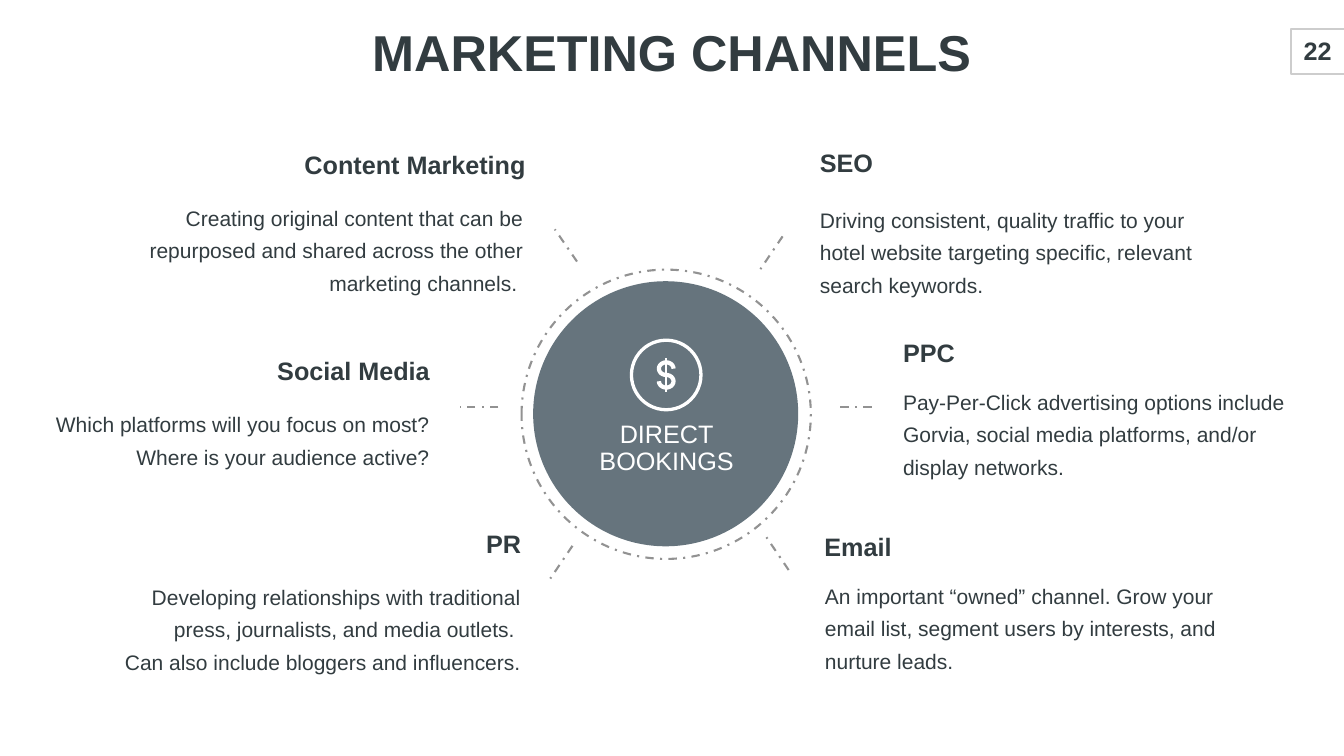
from dataclasses import dataclass
from math import cos, radians, sin

from lxml.etree import SubElement
from pptx import Presentation
from pptx.dml.color import RGBColor
from pptx.enum.dml import MSO_LINE
from pptx.enum.shapes import MSO_CONNECTOR, MSO_SHAPE
from pptx.enum.text import MSO_ANCHOR, PP_ALIGN
from pptx.oxml.ns import qn
from pptx.util import Inches, Pt


@dataclass(frozen=True)
class Theme:
    """Colours, font and type sizes of the deck."""

    ink: str = "323C40"
    disc: str = "66747D"
    dash: str = "929292"
    frame: str = "CDCDCD"
    white: str = "FFFFFF"
    font: str = "Arial"
    title: int = 72
    heading: int = 36
    body: int = 30


LEFT, CENTER, RIGHT = PP_ALIGN.LEFT, PP_ALIGN.CENTER, PP_ALIGN.RIGHT
TOP, MIDDLE, BOTTOM = MSO_ANCHOR.TOP, MSO_ANCHOR.MIDDLE, MSO_ANCHOR.BOTTOM
HEADING_HEIGHT, BODY_HEIGHT = 0.69, 1.75
HEADING_WIDTH = 6.18

CHANNELS = [
    ("Content Marketing", RIGHT, 10.43, 2.97, 10.38, 3.92, 7.76,
     "Creating original content that can be repurposed and shared across the other marketing channels. "),
    ("Social Media", RIGHT, 8.53, 7.07, 8.52, 8.01, 7.76,
     "Which platforms will you focus on most? Where is your audience active?"),
    ("PR", RIGHT, 10.34, 10.5, 10.33, 11.44, 7.97,
     "Developing relationships with traditional press, journalists, and media outlets. \n"
     "Can also include bloggers and influencers."),
    ("SEO", LEFT, 16.27, 2.94, 16.27, 3.96, 7.76,
     "Driving consistent, quality traffic to your hotel website targeting specific, relevant search keywords."),
    ("PPC", LEFT, 17.92, 6.7, 17.92, 7.57, 7.76,
     "Pay-Per-Click advertising options include Gorvia, social media platforms, and/or display networks."),
    ("Email", LEFT, 16.36, 10.55, 16.37, 11.42, 7.97,
     "An important “owned” channel. Grow your email list, segment users by interests, and nurture leads."),
]

SPOKES = [
    (15.53, 4.69, 15.09, 5.34),
    (11.36, 10.83, 10.92, 11.48),
    (17.3, 8.07, 16.55, 8.07),
    (9.89, 8.07, 9.12, 8.07),
    (15.65, 11.31, 15.21, 10.66),
    (11.45, 5.19, 11.01, 4.55),
]


class SlideBuilder:
    """Draws styled elements on one slide."""

    def __init__(self, slide, theme):
        """Keep the slide and its theme."""
        self.slide = slide
        self.theme = theme

    def set_text(self, shape, text, size, color=None, bold=False, align=LEFT,
                 anchor=TOP, spacing=1.0, inset=0):
        """Put one formatted paragraph into a shape."""
        frame = shape.text_frame
        frame.word_wrap = True
        frame.vertical_anchor = anchor
        frame.margin_left = frame.margin_right = Inches(inset)
        frame.margin_top = frame.margin_bottom = Inches(inset)
        paragraph = frame.paragraphs[0]
        paragraph.text = text
        paragraph.alignment = align
        paragraph.line_spacing = spacing
        for run in paragraph.runs:
            run.font.name = self.theme.font
            run.font.size = Pt(size)
            run.font.bold = bold
            run.font.color.rgb = RGBColor.from_string(color or self.theme.ink)

    def title(self, text, left, top, width, height):
        """Fill and place the title placeholder."""
        shape = self.slide.shapes.title
        shape.left, shape.top = Inches(left), Inches(top)
        shape.width, shape.height = Inches(width), Inches(height)
        self.set_text(shape, text, self.theme.title, bold=True, align=CENTER,
                      anchor=MIDDLE, spacing=0.8)

    def text(self, text, left, top, width, height, size, **style):
        """Add a text box."""
        shape = self.slide.shapes.add_textbox(
            Inches(left), Inches(top), Inches(width), Inches(height))
        self.set_text(shape, text, size, **style)

    def stroke(self, line, color, width, dash=None):
        """Format a line or an outline."""
        line.color.rgb = RGBColor.from_string(color)
        line.width = Pt(width)
        if dash:
            line.dash_style = dash

    def shape(self, kind, left, top, width, height, fill=None, line=None,
              line_width=3, dash=None):
        """Add a preset shape with a fill or an outline."""
        shape = self.slide.shapes.add_shape(
            kind, Inches(left), Inches(top), Inches(width), Inches(height))
        shape.shadow.inherit = False
        if fill:
            shape.fill.solid()
            shape.fill.fore_color.rgb = RGBColor.from_string(fill)
        else:
            shape.fill.background()
        if line:
            self.stroke(shape.line, line, line_width, dash)
        else:
            shape.line.fill.background()

    def line(self, start_x, start_y, end_x, end_y, color, width=3, dash=None):
        """Add a straight line."""
        connector = self.slide.shapes.add_connector(
            MSO_CONNECTOR.STRAIGHT, Inches(start_x), Inches(start_y),
            Inches(end_x), Inches(end_y))
        self.stroke(connector.line, color, width, dash)
        SubElement(connector._element.spPr, qn("a:effectLst"))

    def curve(self, points, color, width):
        """Add an open outline through the points."""
        points = [(Inches(x), Inches(y)) for x, y in points]
        builder = self.slide.shapes.build_freeform(*points[0])
        builder.add_line_segments(points[1:], close=False)
        shape = builder.convert_to_shape()
        shape.shadow.inherit = False
        shape.fill.background()
        self.stroke(shape.line, color, width)

    def dollar_icon(self, center_x, center_y):
        """Draw a ringed dollar sign."""
        white, ring, radius = self.theme.white, 1.38, 0.125
        self.shape(MSO_SHAPE.OVAL, center_x - ring / 2, center_y - ring / 2,
                   ring, ring, line=white, line_width=4.7)
        upper = [(angle, -radius) for angle in range(0, -271, -15)]
        lower = [(angle, radius) for angle in range(-75, 181, 15)]
        self.curve([(center_x + 0.145 * cos(radians(angle)),
                     center_y + offset + radius * sin(radians(angle)))
                    for angle, offset in upper + lower], white, 6)
        self.line(center_x, center_y - 0.33, center_x, center_y + 0.33, white, 3.6)

    def channel(self, name, align, heading_edge, heading_top, body_edge,
                body_top, body_width, description):
        """Add a heading and its description against one edge."""
        shift = 1 if align == RIGHT else 0
        self.text(name, heading_edge - shift * HEADING_WIDTH, heading_top,
                  HEADING_WIDTH, HEADING_HEIGHT, self.theme.heading, bold=True,
                  align=align, anchor=MIDDLE, spacing=0.8)
        self.text(description, body_edge - shift * body_width, body_top,
                  body_width, BODY_HEIGHT, self.theme.body, align=align, spacing=1.3)


def main():
    """Build and save the marketing channels slide."""
    presentation = Presentation()
    presentation.slide_width, presentation.slide_height = Inches(26.67), Inches(15)
    theme = Theme()
    slide = presentation.slides.add_slide(presentation.slide_layouts[5])
    builder = SlideBuilder(slide, theme)

    builder.shape(MSO_SHAPE.RECTANGLE, 25.61, 0.57, 1.15, 0.89, line=theme.frame)
    builder.text("22", 25.63, 0.64, 1.03, 0.72, theme.heading, bold=True,
                 align=CENTER, anchor=BOTTOM, inset=0.06)
    builder.title("MARKETING CHANNELS", 6.01, 0.64, 14.64, 0.98)

    builder.shape(MSO_SHAPE.OVAL, 10.58, 5.58, 5.26, 5.26, fill=theme.disc)
    builder.shape(MSO_SHAPE.OVAL, 10.35, 5.35, 5.74, 5.74, line=theme.dash,
                  dash=MSO_LINE.DASH_DOT)
    for spoke in SPOKES:
        builder.line(*spoke, theme.dash, dash=MSO_LINE.DASH_DOT)
    for channel in CHANNELS:
        builder.channel(*channel)
    builder.text("DIRECT\nBOOKINGS", 11.7, 8.18, 3.06, 1.44, theme.heading,
                 color=theme.white, align=CENTER, anchor=MIDDLE, spacing=0.9)
    builder.dollar_icon(13.22, 7.44)

    presentation.save("out.pptx")


if __name__ == "__main__":
    main()
